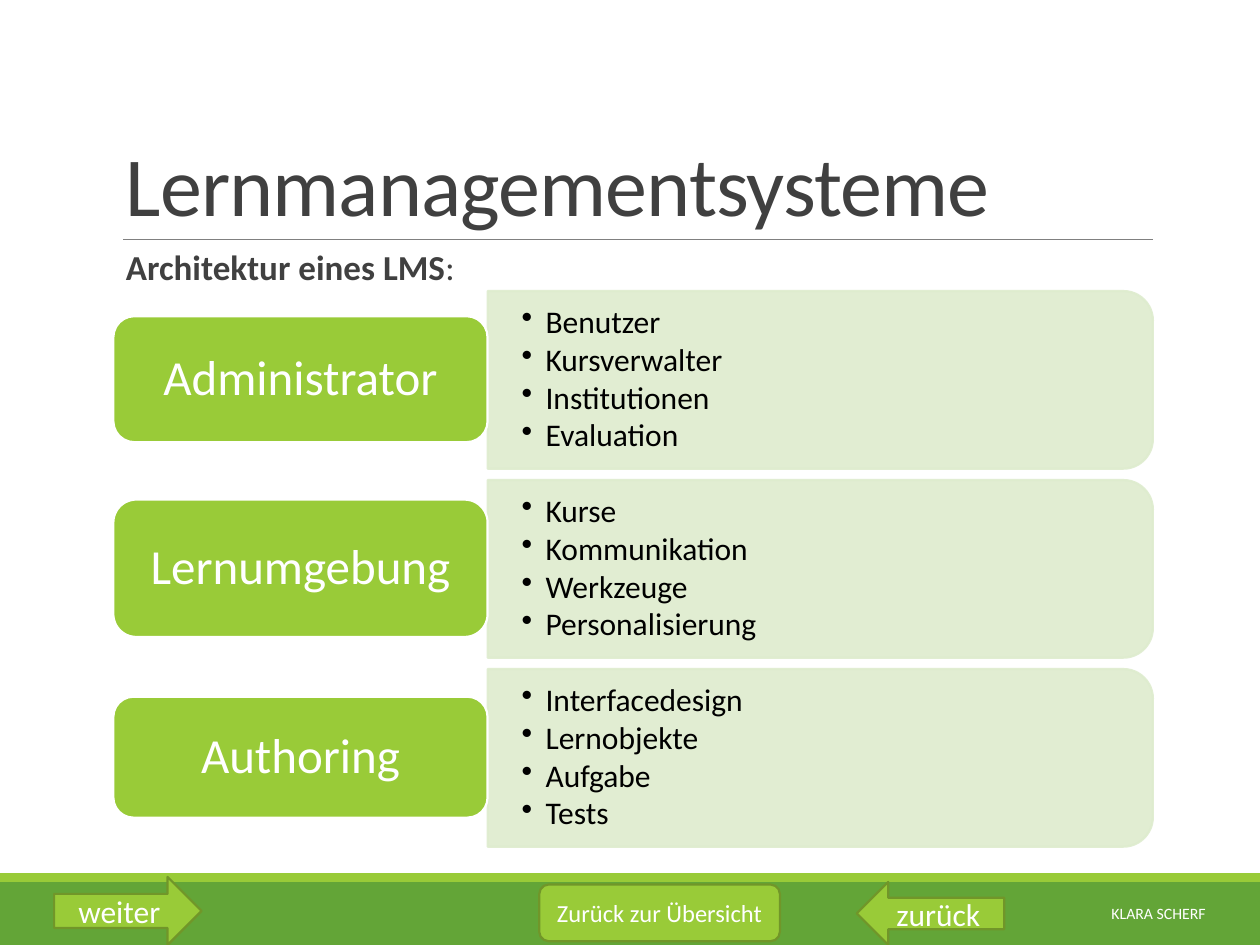
"""Build the slide on the architecture of learning management systems."""
from dataclasses import dataclass

from lxml.etree import SubElement
from pptx import Presentation
from pptx.dml.color import RGBColor as RGB
from pptx.enum.shapes import MSO_CONNECTOR as LINE, MSO_SHAPE as SHAPE
from pptx.enum.text import MSO_ANCHOR as ANCHOR, PP_ALIGN as ALIGN
from pptx.oxml.ns import qn
from pptx.util import Inches, Pt


@dataclass(frozen=True)
class Theme:
    font: str = "Calibri"
    lime: str = "99CB38"
    green: str = "63A537"
    olive: str = "719629"
    pale: str = "DEECCE"
    ink: str = "404040"
    rule: str = "808080"
    black: str = "000000"
    white: str = "FFFFFF"
    title: float = 48
    label: float = 28
    heading: float = 20
    body: float = 18
    button: float = 14
    footer: float = 9
    outline: float = 1.25
    hairline: float = 0.5


def apply(obj, fmt):
    for name, value in fmt.items():
        setattr(obj, name, value)


class Deck:
    def __init__(self, theme, width, height):
        self.t = theme
        self.prs = Presentation()
        apply(self.prs, {"slide_width": Inches(width), "slide_height": Inches(height)})
        self.s = self.prs.slides.add_slide(self.prs.slide_layouts[6])

    def shape(self, kind, box, fill, line=None, rotation=0, opacity=None):
        sp = self.s.shapes.add_shape(kind, *map(Inches, box))
        sp.shadow.inherit = False
        sp.rotation = rotation
        sp.fill.solid()
        sp.fill.fore_color.rgb = RGB.from_string(fill)
        if line:
            sp.line.color.rgb = RGB.from_string(line)
            sp.line.width = Pt(self.t.outline)
        else:
            sp.line.fill.background()
        if opacity:
            for color in sp._element.spPr.iter(qn("a:srgbClr")):
                SubElement(color, qn("a:alpha"), val=str(opacity * 1000))
        return sp

    def rule(self, x1, x2, y):
        ln = self.s.shapes.add_connector(LINE.STRAIGHT, *map(Inches, (x1, y, x2, y)))
        ln.line.color.rgb = RGB.from_string(self.t.rule)
        ln.line.width = Pt(self.t.hairline)
        SubElement(ln._element.spPr, qn("a:effectLst"))

    def set_text(self, sp, lines, size, color, frame=None, para=None, bullet=None, spacing=None):
        tf = sp.text_frame
        apply(tf, {"word_wrap": True, "vertical_anchor": ANCHOR.MIDDLE, **(frame or {})})
        for i, runs in enumerate(lines):
            p = tf.paragraphs[0] if i == 0 else tf.add_paragraph()
            apply(p, para or {})
            if bullet:
                pPr = p._p.get_or_add_pPr()
                pPr.set("marL", str(Inches(bullet)))
                pPr.set("indent", str(-Inches(bullet)))
                SubElement(pPr, qn("a:buChar"), char="•")
            for text, bold in runs:
                r = p.add_run()
                r.text = text
                apply(r.font, {"name": self.t.font, "size": Pt(size), "bold": bold})
                r.font.color.rgb = RGB.from_string(color)
                if spacing:
                    r._r.get_or_add_rPr().set("spc", str(spacing))

    def text(self, box, lines, size, color, **fmt):
        sp = self.s.shapes.add_textbox(*map(Inches, box))
        self.set_text(sp, lines, size, color, **fmt)

    def button(self, kind, box, label, size):
        sp = self.shape(kind, box, self.t.lime, self.t.olive)
        self.set_text(sp, [[(label, False)]], size, self.t.white, para={"alignment": ALIGN.CENTER})

    def panel(self, box, items):
        x, y, w, h = box
        upright = (x + (w - h) / 2, y + (h - w) / 2, h, w)
        self.shape(SHAPE.ROUND_2_SAME_RECTANGLE, upright, self.t.pale, self.t.pale, 90, 90)
        margins = {"margin_left": Inches(0.27), "margin_right": Inches(0.27),
                   "margin_top": Inches(0.14), "margin_bottom": Inches(0.14)}
        self.text((x, y + 0.07, w - 0.07, h - 0.14), [[(item, False)] for item in items],
                  self.t.body, self.t.black, frame=margins, bullet=0.19,
                  para={"level": 1, "line_spacing": 0.9, "space_after": Pt(2.2)})

    def label(self, box, text):
        sp = self.shape(SHAPE.ROUNDED_RECTANGLE, box, self.t.lime, self.t.white)
        self.set_text(sp, [[(text, False)]], self.t.label, self.t.white,
                      para={"alignment": ALIGN.CENTER, "line_spacing": 0.9})


LAYERS = [
    ("Administrator", 1.0, ["Benutzer", "Kursverwalter", "Institutionen", "Evaluation"]),
    ("Lernumgebung", 1.09, ["Kurse", "Kommunikation", "Werkzeuge", "Personalisierung"]),
    ("Authoring", 0.96, ["Interfacedesign", "Lernobjekte", "Aufgabe", "Tests"]),
]


def main():
    t = Theme()
    deck = Deck(t, 10, 7.5)
    deck.shape(SHAPE.RECTANGLE, (0, 7, 10, 0.5), t.green)
    deck.shape(SHAPE.RECTANGLE, (0, 6.93, 10, 0.07), t.lime)
    deck.rule(0.98, 9.15, 1.9)
    deck.text((0.9, 0.31, 8.25, 1.59), [[("Lernmanagementsysteme", False)]], t.title, t.ink,
              frame={"vertical_anchor": ANCHOR.BOTTOM}, para={"line_spacing": 0.85}, spacing=-50)
    deck.text((0.9, 1.9, 8.25, 0.44), [[("Architektur eines LMS", True), (":", False)]],
              t.heading, t.ink, frame={"vertical_anchor": ANCHOR.TOP})

    for i, (name, height, items) in enumerate(LAYERS):
        middle = 3.01 + 1.5 * i
        deck.panel((3.87, middle - 0.7, 5.28, 1.41), items)
        deck.label((0.9, middle - height / 2, 2.97, height), name)

    deck.text((8.31, 7.05, 1.77, 0.4), [[("KLARA SCHERF", False)]], t.footer, t.white,
              para={"alignment": ALIGN.CENTER})
    deck.button(SHAPE.ROUNDED_RECTANGLE, (4.28, 7.02, 1.91, 0.45), "Zurück zur Übersicht", t.button)
    deck.button(SHAPE.RIGHT_ARROW, (0.43, 6.96, 1.17, 0.54), "weiter", t.body)
    deck.button(SHAPE.LEFT_ARROW, (6.8, 7, 1.17, 0.5), "zurück", t.body)
    deck.prs.save("out.pptx")


if __name__ == "__main__":
    main()
